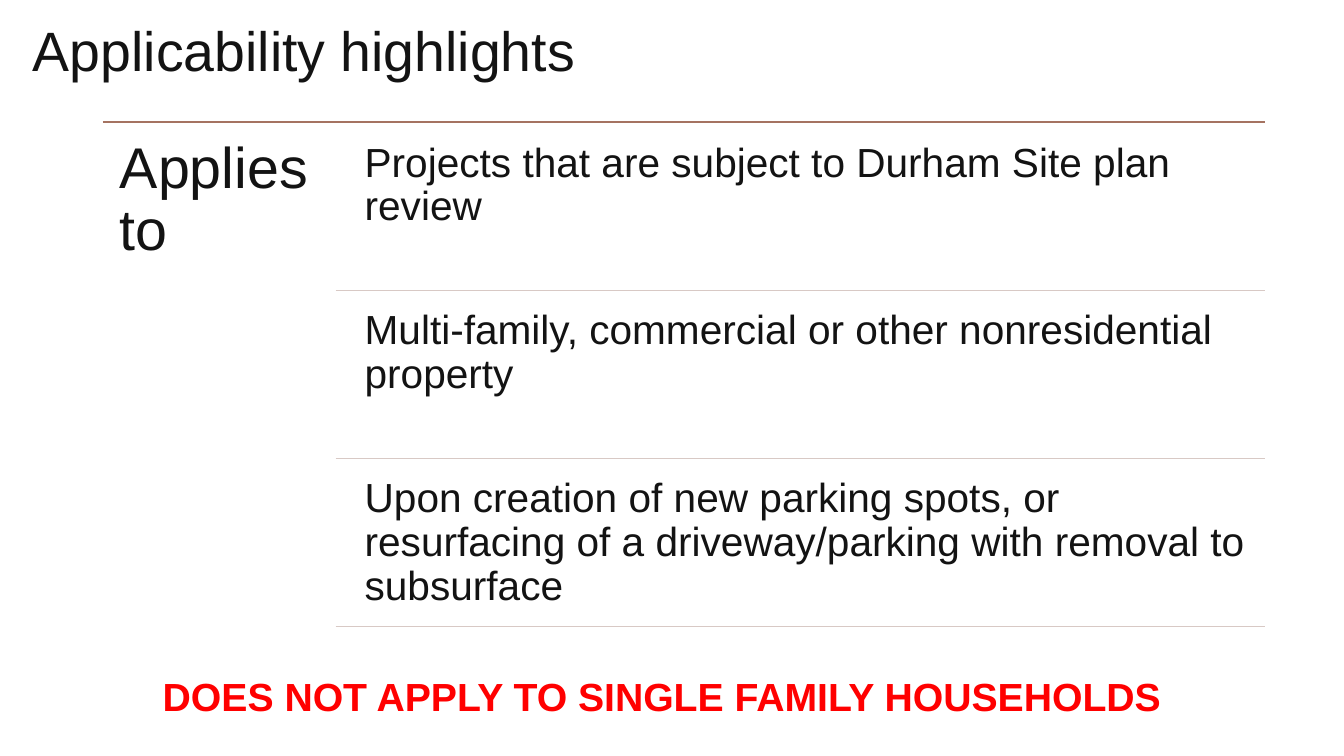
from lxml.etree import SubElement
from pptx import Presentation
from pptx.dml.color import RGBColor
from pptx.enum.shapes import MSO_CONNECTOR
from pptx.enum.text import MSO_ANCHOR, PP_ALIGN
from pptx.oxml.ns import qn
from pptx.util import Cm, Pt

INK = RGBColor(0x13, 0x13, 0x13)
RED = RGBColor(0xFF, 0x00, 0x00)
BROWN = RGBColor(0xA5, 0x73, 0x61)
PALE = RGBColor(0xD8, 0xC9, 0xC5)

RIGHT = 31.88
ROW_TOP, ROW_PITCH, ROW_HEIGHT = 3.28, 4.23, 4.04
CRITERIA = [
    "Projects that are subject to Durham Site plan review",
    "Multi-family, commercial or other nonresidential property",
    "Upon creation of new parking spots, or resurfacing of a driveway/parking "
    "with removal to subsurface",
]

deck = Presentation()
deck.slide_width, deck.slide_height = Cm(33.87), Cm(19.05)
page = deck.slides.add_slide(deck.slide_layouts[6])


def add_text(text, left, top, width, height, inset=None, spacing=0.9,
             align=PP_ALIGN.LEFT, **font_format):
    """Add a wrapped, top-anchored text box; lengths in cm, inset on all sides."""
    frame = page.shapes.add_textbox(Cm(left), Cm(top), Cm(width), Cm(height)).text_frame
    frame.word_wrap = True
    frame.vertical_anchor = MSO_ANCHOR.TOP
    if inset is not None:
        for side in ("left", "top", "right", "bottom"):
            setattr(frame, f"margin_{side}", Cm(inset))
    para = frame.paragraphs[0]
    para.alignment, para.line_spacing = align, spacing
    span = para.add_run()
    span.text = text
    color = font_format.pop("color", INK)
    for name, value in {"name": "Arial", **font_format}.items():
        setattr(span.font, name, value)
    span.font.color.rgb = color


def add_rule(left, top, color):
    """Add a thin horizontal line that runs to the right edge of the list."""
    rule = page.shapes.add_connector(
        MSO_CONNECTOR.STRAIGHT, Cm(left), Cm(top), Cm(RIGHT), Cm(top))
    rule.line.color.rgb = color
    rule.line.width = Pt(1)
    SubElement(rule.element.spPr, qn("a:effectLst"))


add_text("Applicability highlights", 0.58, 0.48, 15.42, 2.79, size=Pt(39.6))

add_rule(2.59, 3.07, BROWN)
add_text("Applies to", 2.59, 3.07, 5.87, 12.93, inset=0.43, size=Pt(41))

for index, criterion in enumerate(CRITERIA):
    top = ROW_TOP + index * ROW_PITCH
    add_text(criterion, 8.89, top, RIGHT - 8.89, ROW_HEIGHT, inset=0.3, size=Pt(29))
    add_rule(8.46, top + ROW_HEIGHT, PALE)

add_text("DOES NOT APPLY TO SINGLE FAMILY HOUSEHOLDS", 2.62, 16.81, 28.12, 1.45,
         spacing=1.0, align=PP_ALIGN.CENTER, size=Pt(28), bold=True, color=RED)

deck.save("out.pptx")
